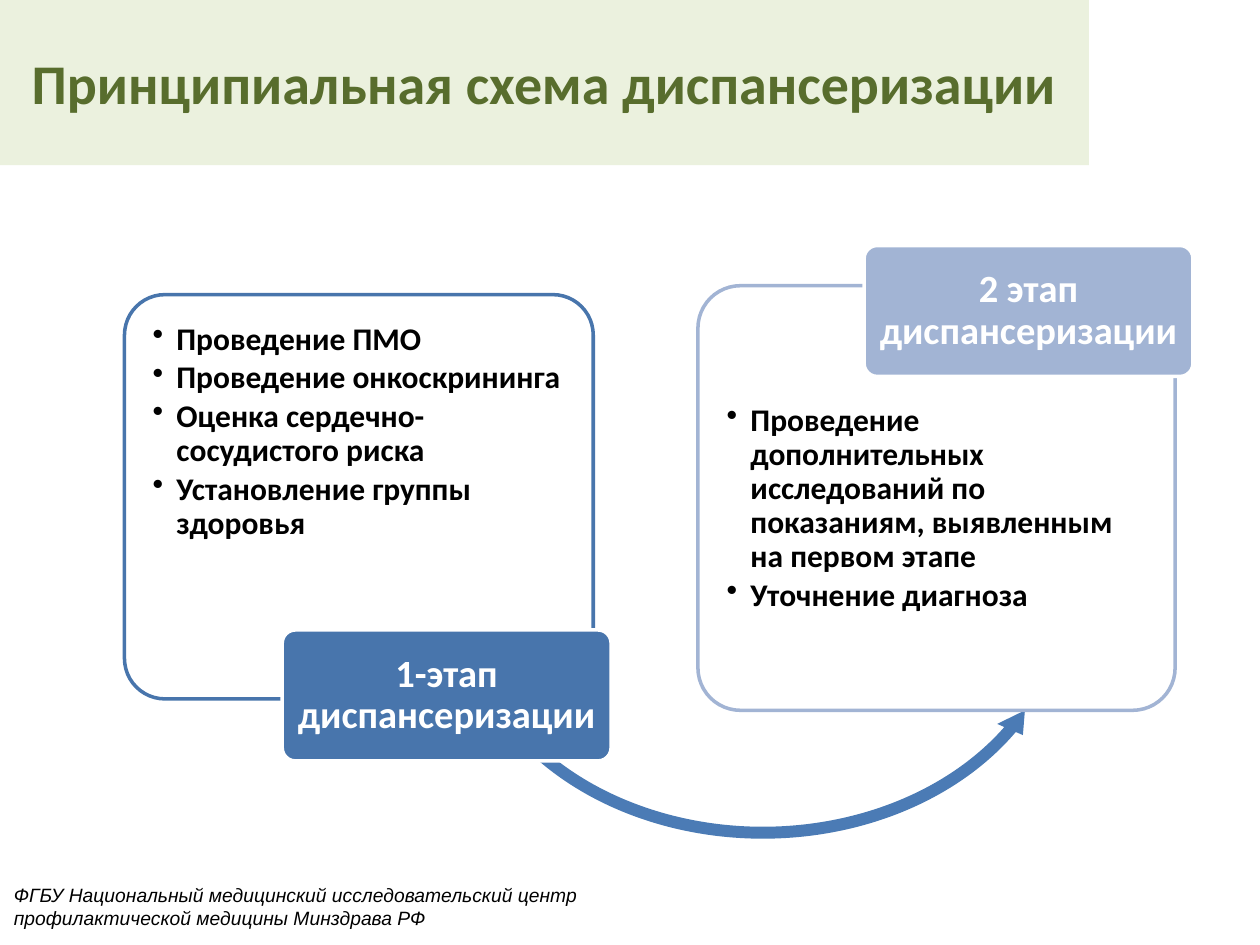
import pptx
import pptx.util
import pptx.dml.color
import pptx.enum.shapes
import pptx.enum.text
from lxml import etree

Cm, Pt = pptx.util.Cm, pptx.util.Pt
RGBColor = pptx.dml.color.RGBColor
SHAPE = pptx.enum.shapes.MSO_SHAPE
ALIGN = pptx.enum.text.PP_ALIGN
ANCHOR = pptx.enum.text.MSO_ANCHOR

WHITE = RGBColor(0xFF, 0xFF, 0xFF)
BLACK = RGBColor(0, 0, 0)
PALE_GREEN = RGBColor(0xEB, 0xF1, 0xDE)
OLIVE = RGBColor(0x58, 0x6D, 0x2D)
BLUE = RGBColor(0x48, 0x75, 0xAC)
ARROW_BLUE = RGBColor(0x4B, 0x7B, 0xB5)
LIGHT_BLUE = RGBColor(0xA2, 0xB4, 0xD4)

# Content; places are left, top, width, height in cm
TITLE = "Принципиальная схема диспансеризации"
FOOTER = ("ФГБУ Национальный медицинский исследовательский центр "
          "профилактической медицины Минздрава РФ")
STAGES = [
    {"label": "1-этап диспансеризации", "color": BLUE,
     "card": (2.51, 5.94, 9.45, 8.15), "label_at": (5.69, 12.7), "text_top": 0.33,
     "steps": ["Проведение ПМО", "Проведение онкоскрининга",
               "Оценка сердечно-сосудистого риска",
               "Установление группы здоровья"]},
    {"label": "2 этап диспансеризации", "color": LIGHT_BLUE,
     "card": (14.07, 5.76, 9.62, 8.56), "label_at": (17.42, 4.95), "text_top": 2.14,
     "steps": ["Проведение дополнительных исследований по показаниям, "
               "выявленным на первом этапе", "Уточнение диагноза"]},
]
LABEL_SIZE = (6.63, 2.64)
ARROW_AT = (9.07, 6.99, 12.62, 10.08)
ARROW_ADJUSTMENTS = (0.024, 2.881, 16.949, 86.558, 0.028)


def add_box(slide, preset, place, fill, line=None):
    box = slide.shapes.add_shape(preset, *(Cm(v) for v in place))
    box.shadow.inherit = False
    box.fill.solid()
    box.fill.fore_color.rgb = fill
    if line is None:
        box.line.fill.background()
    else:
        box.line.color.rgb = line
        box.line.width = Pt(2)
    if preset == SHAPE.ROUNDED_RECTANGLE:
        box.adjustments[0] = 0.1
    return box


def write(box, lines, size, color, align, anchor, insets, spacing=1.0, after=0,
          bullets=False, font="Calibri", bold=True, italic=False):
    frame = box.text_frame
    frame.word_wrap = True
    frame.vertical_anchor = anchor
    (frame.margin_left, frame.margin_top,
     frame.margin_right, frame.margin_bottom) = (Cm(v) for v in insets)
    for i, line in enumerate(lines):
        paragraph = frame.paragraphs[0] if i == 0 else frame.add_paragraph()
        paragraph.text = line
        paragraph.alignment = align
        paragraph.line_spacing = spacing
        paragraph.space_after = Pt(after)
        if bullets:
            add_bullet(paragraph)
        paragraph.font.name = font
        paragraph.font.size = Pt(size)
        paragraph.font.bold = bold
        paragraph.font.italic = italic
        paragraph.font.color.rgb = color


def add_bullet(paragraph):
    properties = paragraph._p.get_or_add_pPr()
    indent = Cm(0.48)
    properties.set("marL", str(indent))
    properties.set("indent", str(-indent))
    bullet = etree.SubElement(properties, pptx.oxml.ns.qn("a:buChar"))
    bullet.set("char", "•")


def add_card(slide, stage):
    card = add_box(slide, SHAPE.ROUNDED_RECTANGLE, stage["card"], WHITE, stage["color"])
    write(card, stage["steps"], 18, BLACK, ALIGN.LEFT, ANCHOR.TOP,
          (0.33, stage["text_top"], 0.33, 0.33), spacing=0.9, after=2.7, bullets=True)


def add_label(slide, stage):
    label = add_box(slide, SHAPE.ROUNDED_RECTANGLE, stage["label_at"] + LABEL_SIZE,
                    stage["color"], WHITE)
    write(label, [stage["label"]], 22, WHITE, ALIGN.CENTER, ANCHOR.MIDDLE,
          (0.12, 0.08, 0.12, 0.08), spacing=0.9)


def main():
    deck = pptx.Presentation()
    deck.slide_width, deck.slide_height = Cm(25.4), Cm(19.05)
    slide = deck.slides.add_slide(deck.slide_layouts[6])

    # Footer
    footer = slide.shapes.add_textbox(Cm(0.03), Cm(17.68), Cm(12.42), Cm(1.19))
    write(footer, [FOOTER], 11, BLACK, ALIGN.LEFT, ANCHOR.TOP,
          (0.25, 0.13, 0.25, 0.13), font="Arial", bold=False, italic=True)

    # Title band
    title = add_box(slide, SHAPE.RECTANGLE, (0, 0, 21.95, 3.33), PALE_GREEN)
    write(title, [TITLE], 32, OLIVE, ALIGN.CENTER, ANCHOR.MIDDLE,
          (0.25, 0.13, 0.25, 0.13))

    # Stages, with the arrow tucked under the first label
    first, second = STAGES
    add_card(slide, first)
    arrow = add_box(slide, SHAPE.LEFT_CIRCULAR_ARROW, ARROW_AT, ARROW_BLUE)
    for i, value in enumerate(ARROW_ADJUSTMENTS):
        arrow.adjustments[i] = value
    add_label(slide, first)
    add_card(slide, second)
    add_label(slide, second)

    deck.save("out.pptx")


if __name__ == "__main__":
    main()
